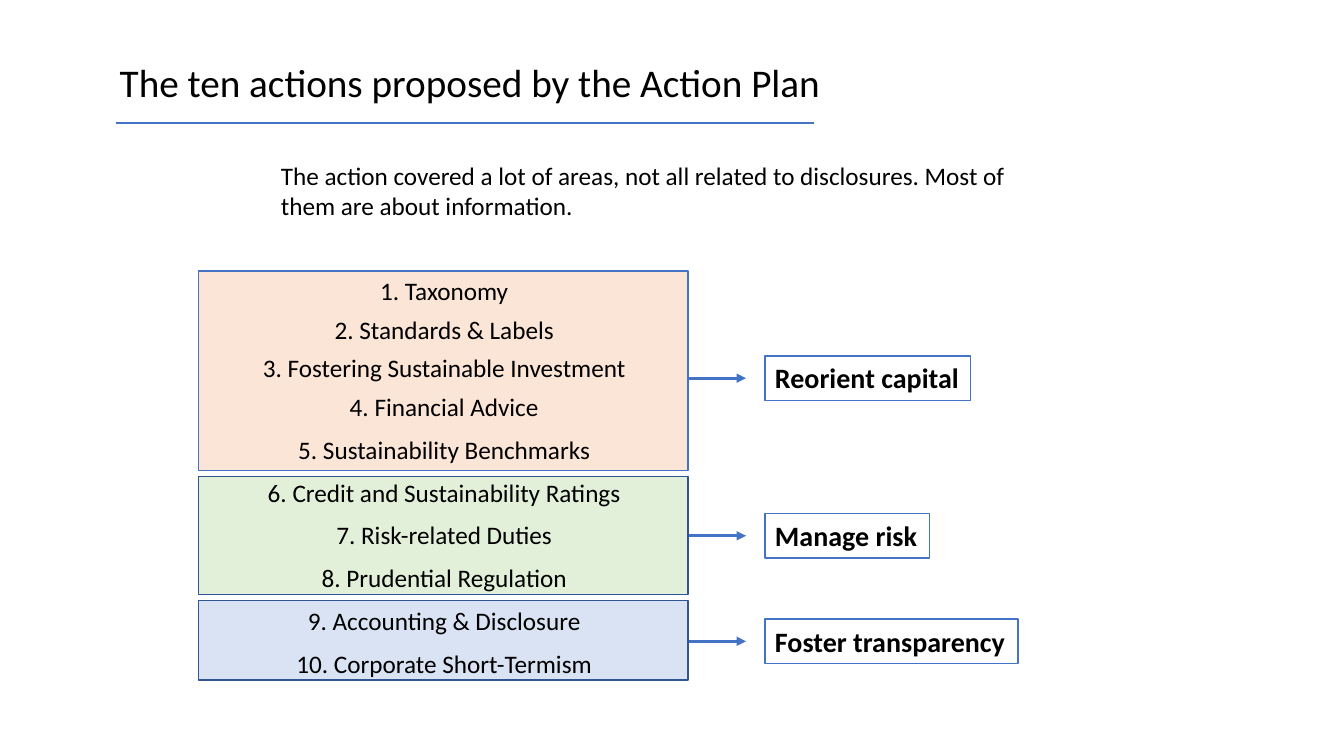
from dataclasses import dataclass

from lxml import etree
from pptx import Presentation
from pptx import util as u
from pptx.dml.color import RGBColor
from pptx.enum import shapes, text
from pptx.oxml import ns


@dataclass(frozen=True)
class Theme:
    font: str = "Calibri"
    title_size: int = 28
    body_size: int = 18
    label_size: int = 20
    ink: str = "000000"
    paper: str = "FFFFFF"
    accent: str = "4472C4"
    dark_accent: str = "325491"
    thin: float = 1
    thick: float = 2.25


@dataclass(frozen=True)
class Goal:
    label: str
    label_width: float
    middle: float
    height: float
    fill: str
    outline: str
    actions: tuple[str, ...]


THEME = Theme()
GOALS = (
    Goal("Reorient capital", 5.18, 9.53, 5.03, "FBE5D6", THEME.accent,
         ("Taxonomy", "Standards & Labels", "Fostering Sustainable Investment",
          "Financial Advice", "Sustainability Benchmarks")),
    Goal("Manage risk", 4.14, 13.5, 2.97, "E2F0D9", THEME.dark_accent,
         ("Credit and Sustainability Ratings", "Risk-related Duties",
          "Prudential Regulation")),
    Goal("Foster transparency", 6.38, 16.16, 2.01, "DAE3F3", THEME.dark_accent,
         ("Accounting & Disclosure", "Corporate Short-Termism")),
)
PANEL_LEFT, PANEL_TOP, PANEL_WIDTH, PANEL_GAP = 5, 6.83, 12.34, 0.15
ARROW_LEFT, ARROW_RIGHT = 17.36, 18.8
LABEL_LEFT, LABEL_HEIGHT = 19.28, 1.12
TIGHT_ACTIONS = 3


def add_run(paragraph, words: str, size: int, bold: bool = False) -> None:
    run = paragraph.add_run()
    run.text = words
    run.font.name = THEME.font
    run.font.size = u.Pt(size)
    run.font.bold = bold
    run.font.color.rgb = RGBColor.from_string(THEME.ink)


def add_text_frame(slide, left: float, top: float, width: float, height: float):
    box = slide.shapes.add_textbox(u.Cm(left), u.Cm(top), u.Cm(width), u.Cm(height))
    box.text_frame.word_wrap = True
    return box.text_frame


def add_rectangle(slide, left: float, top: float, width: float, height: float,
                  fill: str, outline: str):
    rectangle = slide.shapes.add_shape(
        shapes.MSO_SHAPE.RECTANGLE, u.Cm(left), u.Cm(top), u.Cm(width), u.Cm(height))
    rectangle.shadow.inherit = False
    rectangle.fill.solid()
    rectangle.fill.fore_color.rgb = RGBColor.from_string(fill)
    rectangle.line.color.rgb = RGBColor.from_string(outline)
    rectangle.line.width = u.Pt(THEME.thin)
    return rectangle


def add_line(slide, left: float, right: float, y: float, width: float,
             arrow: bool = False) -> None:
    line = slide.shapes.add_connector(
        shapes.MSO_CONNECTOR.STRAIGHT, u.Cm(left), u.Cm(y), u.Cm(right), u.Cm(y))
    line.line.color.rgb = RGBColor.from_string(THEME.accent)
    line.line.width = u.Pt(width)
    if arrow:
        etree.SubElement(line.line._get_or_add_ln(), ns.qn("a:tailEnd"), type="triangle")
    etree.SubElement(line._element.spPr, ns.qn("a:effectLst"))


def add_heading(slide) -> None:
    title = add_text_frame(slide, 1.68, 1, 20.32, 1.8)
    title.vertical_anchor = text.MSO_ANCHOR.BOTTOM
    paragraph = title.paragraphs[0]
    paragraph.alignment = text.PP_ALIGN.CENTER
    paragraph.line_spacing = 0.9
    add_run(paragraph, "The ten actions proposed by the Action Plan", THEME.title_size)
    add_line(slide, 2.92, 20.52, 3.1, THEME.thin)

    introduction = add_text_frame(slide, 6.83, 3.91, 20.19, 1.8)
    add_run(introduction.paragraphs[0],
            "The action covered a lot of areas, not all related to disclosures. "
            "Most of them are about information.", THEME.body_size)


def add_panels(slide) -> None:
    top = PANEL_TOP
    for goal in GOALS:
        add_rectangle(slide, PANEL_LEFT, top, PANEL_WIDTH, goal.height,
                      goal.fill, goal.outline)
        top += goal.height + PANEL_GAP


def add_actions(slide) -> None:
    """Number the actions of all goals in one list that runs across the panels."""
    frame = add_text_frame(slide, 4.06, 6.81, 14.27, 10.9)
    actions = [action for goal in GOALS for action in goal.actions]
    for number, action in enumerate(actions, start=1):
        paragraph = frame.paragraphs[0] if number == 1 else frame.add_paragraph()
        paragraph.alignment = text.PP_ALIGN.CENTER
        paragraph.space_after = u.Pt(6 if number <= TIGHT_ACTIONS else 9)
        add_run(paragraph, f"{number}. {action}", THEME.body_size)


def add_goal_label(slide, goal: Goal) -> None:
    add_line(slide, ARROW_LEFT, ARROW_RIGHT, goal.middle, THEME.thick, arrow=True)
    label = add_rectangle(slide, LABEL_LEFT, goal.middle - LABEL_HEIGHT / 2,
                          goal.label_width, LABEL_HEIGHT, THEME.paper, THEME.accent)
    frame = label.text_frame
    frame.word_wrap = False
    frame.auto_size = text.MSO_AUTO_SIZE.SHAPE_TO_FIT_TEXT
    frame.vertical_anchor = text.MSO_ANCHOR.TOP
    frame.paragraphs[0].alignment = text.PP_ALIGN.LEFT
    add_run(frame.paragraphs[0], goal.label, THEME.label_size, bold=True)


def main() -> None:
    presentation = Presentation()
    presentation.slide_width = u.Cm(33.87)
    presentation.slide_height = u.Cm(19.05)
    slide = presentation.slides.add_slide(presentation.slide_layouts[6])
    add_heading(slide)
    add_panels(slide)
    add_actions(slide)
    for goal in GOALS:
        add_goal_label(slide, goal)
    presentation.save("out.pptx")


if __name__ == "__main__":
    main()
